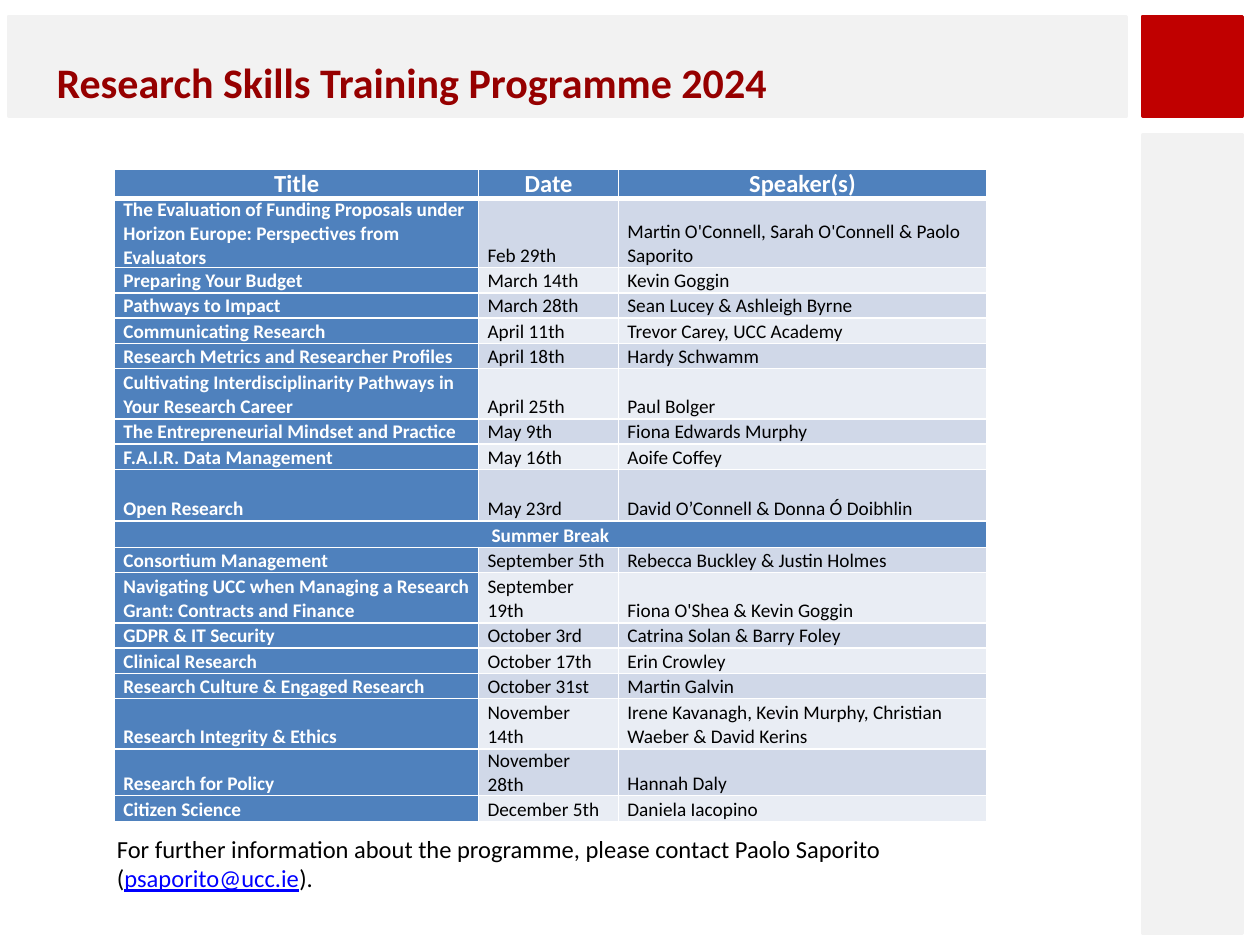
from dataclasses import dataclass

from lxml import etree
from pptx import Presentation
from pptx.dml.color import RGBColor
from pptx.enum.shapes import MSO_SHAPE
from pptx.enum.text import MSO_ANCHOR, PP_ALIGN
from pptx.oxml.ns import qn
from pptx.util import Inches, Pt

RECTANGLE = MSO_SHAPE.RECTANGLE
BOTTOM = MSO_ANCHOR.BOTTOM
LEFT, CENTER = PP_ALIGN.LEFT, PP_ALIGN.CENTER


@dataclass(frozen=True)
class Theme:
    font: str = "Calibri"
    panel: str = "F2F2F2"
    accent: str = "C00000"
    heading: str = "960000"
    header: str = "4F81BD"
    band_dark: str = "D0D8E8"
    band_light: str = "E9EDF4"
    white: str = "FFFFFF"
    black: str = "000000"
    link: str = "0000FF"
    heading_size: int = 24
    large_size: int = 14
    body_size: int = 11


THEME = Theme()


def write(paragraph, text, size=THEME.body_size, color=THEME.black,
          bold=False, underline=False, align=LEFT):
    paragraph.alignment = align
    run = paragraph.add_run()
    run.text = text
    run.font.name = THEME.font
    run.font.size = Pt(size)
    run.font.bold = bold
    run.font.underline = underline
    run.font.color.rgb = RGBColor.from_string(color)


def set_borders(cell, top, bottom):
    properties = cell._tc.get_or_add_tcPr()
    for side, points in (("L", 1), ("R", 1), ("T", top), ("B", bottom)):
        line = etree.SubElement(properties, qn(f"a:ln{side}"), w=str(Pt(points)))
        fill = etree.SubElement(line, qn("a:solidFill"))
        etree.SubElement(fill, qn("a:srgbClr"), val=THEME.white)


prs = Presentation()
prs.slide_width, prs.slide_height = Inches(10), Inches(7.5)
slide = prs.slides.add_slide(prs.slide_layouts[6])

# Frame: title band, side band and corner square
for left, top, width, height, color in (
    (0.07, 0.13, 8.87, 0.79, THEME.panel),
    (9.07, 1.07, 0.79, 6.34, THEME.panel),
    (9.07, 0.13, 0.79, 0.79, THEME.accent),
):
    band = slide.shapes.add_shape(
        RECTANGLE, Inches(left), Inches(top), Inches(width), Inches(height))
    band.shadow.inherit = False
    band.fill.solid()
    band.fill.fore_color.rgb = RGBColor.from_string(color)
    band.line.color.rgb = RGBColor.from_string(color)
    band.line.width = Pt(2)

# Heading
heading = slide.shapes.add_textbox(
    Inches(0.35), Inches(0.4), Inches(7.95), Inches(0.5)).text_frame
heading.word_wrap = True
write(heading.paragraphs[0], "Research Skills Training Programme 2024",
      size=THEME.heading_size, color=THEME.heading, bold=True)

# Programme: row height, title, date, speakers
SESSIONS = [
    (0.21, "Title", "Date", "Speaker(s)"),
    (0.53, "The Evaluation of Funding Proposals under Horizon Europe: "
           "Perspectives from Evaluators", "Feb 29th",
     "Martin O'Connell, Sarah O'Connell & Paolo Saporito"),
    (0.2, "Preparing Your Budget", "March 14th", "Kevin Goggin"),
    (0.2, "Pathways to Impact", "March 28th", "Sean Lucey & Ashleigh Byrne"),
    (0.2, "Communicating Research", "April 11th", "Trevor Carey, UCC Academy"),
    (0.2, "Research Metrics and Researcher Profiles", "April 18th", "Hardy Schwamm"),
    (0.4, "Cultivating Interdisciplinarity Pathways in Your Research Career",
     "April 25th", "Paul Bolger"),
    (0.2, "The Entrepreneurial Mindset and Practice", "May 9th", "Fiona Edwards Murphy"),
    (0.2, "F.A.I.R. Data Management", "May 16th", "Aoife Coffey"),
    (0.41, "Open Research", "May 23rd", "David O’Connell & Donna Ó Doibhlin"),
    (0.21, "Summer Break"),
    (0.2, "Consortium Management", "September 5th", "Rebecca Buckley & Justin Holmes"),
    (0.4, "Navigating UCC when Managing a Research Grant: Contracts and Finance",
     "September 19th", "Fiona O'Shea & Kevin Goggin"),
    (0.2, "GDPR & IT Security", "October 3rd", "Catrina Solan & Barry Foley"),
    (0.2, "Clinical Research", "October 17th", "Erin Crowley"),
    (0.2, "Research Culture & Engaged Research", "October 31st", "Martin Galvin"),
    (0.4, "Research Integrity & Ethics", "November 14th",
     "Irene Kavanagh, Kevin Murphy, Christian Waeber & David Kerins"),
    (0.37, "Research for Policy", "November 28th", "Hannah Daly"),
    (0.21, "Citizen Science", "December 5th", "Daniela Iacopino"),
]
COLUMN_WIDTHS = (2.89, 1.11, 2.92)

programme = slide.shapes.add_table(
    len(SESSIONS), len(COLUMN_WIDTHS), Inches(0.91), Inches(1.34),
    Inches(sum(COLUMN_WIDTHS)), Inches(sum(s[0] for s in SESSIONS))).table
programme.first_col = True
for column, width in zip(programme.columns, COLUMN_WIDTHS):
    column.width = Inches(width)

for r, (height, *entries) in enumerate(SESSIONS):
    programme.rows[r].height = Inches(height)
    is_header, is_break = r == 0, len(entries) == 1
    if is_break:
        programme.cell(r, 0).merge(programme.cell(r, len(COLUMN_WIDTHS) - 1))
    for c in range(len(COLUMN_WIDTHS)):
        cell = programme.cell(r, c)
        set_borders(cell, top=3 if r == 1 else 1, bottom=3 if is_header else 1)
        cell.vertical_anchor = BOTTOM
        cell.margin_left = cell.margin_right = Inches(0.07)
        cell.margin_top = cell.margin_bottom = 0
        strong = is_header or is_break or c == 0
        band_color = THEME.band_dark if r % 2 else THEME.band_light
        cell.fill.solid()
        cell.fill.fore_color.rgb = RGBColor.from_string(
            THEME.header if strong else band_color)
        if c < len(entries):
            write(cell.text_frame.paragraphs[0], entries[c],
                  size=THEME.large_size if is_header else THEME.body_size,
                  color=THEME.white if strong else THEME.black, bold=strong,
                  align=CENTER if is_header or is_break else LEFT)

# Contact
contact = slide.shapes.add_textbox(
    Inches(0.83), Inches(6.57), Inches(7.64), Inches(0.57)).text_frame
contact.word_wrap = True
contact_line = contact.paragraphs[0]
write(contact_line, "For further information about the programme, "
      "please contact Paolo Saporito (", size=THEME.large_size)
write(contact_line, "psaporito@ucc.ie", size=THEME.large_size,
      color=THEME.link, underline=True)
write(contact_line, ").", size=THEME.large_size)

prs.save("out.pptx")
